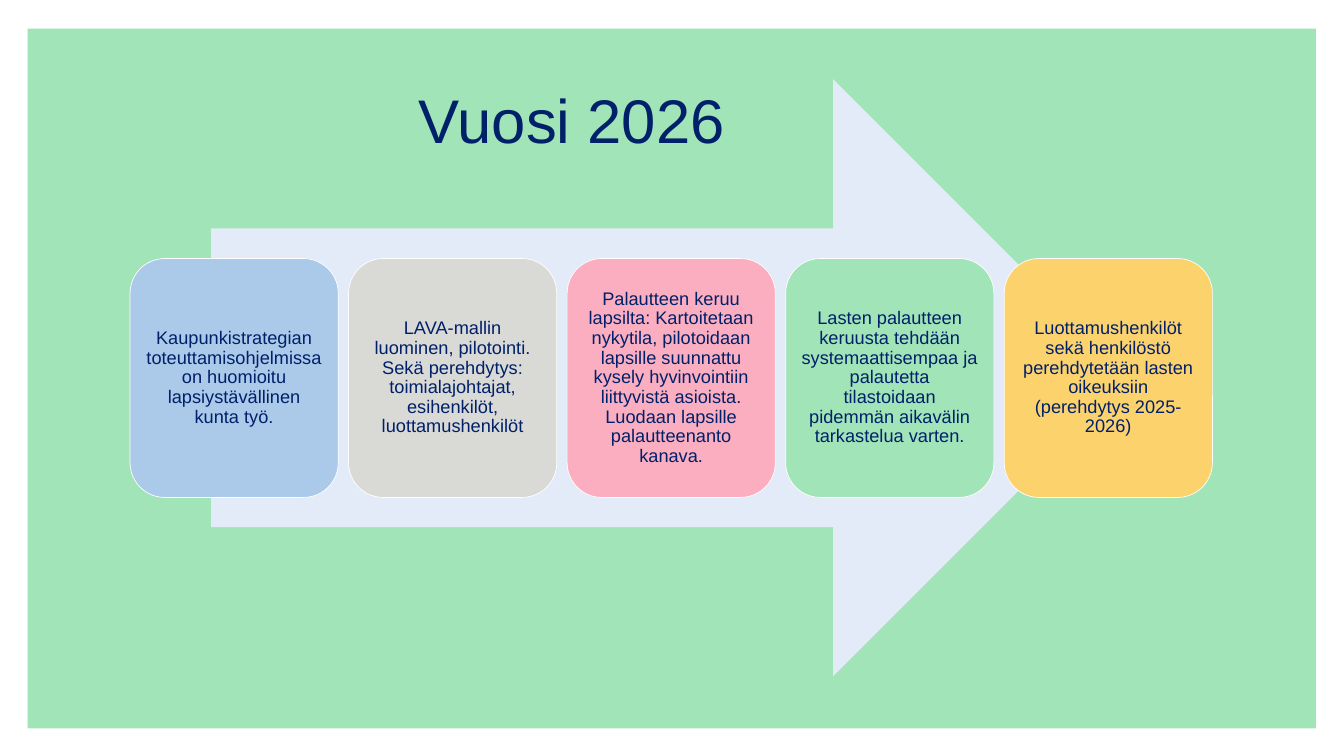
from typing import NamedTuple

from pptx import Presentation
from pptx import util as u
from pptx.dml.color import RGBColor
from pptx.enum import shapes, text

NAVY = "002069"
WHITE = "FFFFFF"
MINT = "A1E4B8"
PALE_BLUE = "E2EBF7"
STEP_LEFT, STEP_TOP, STEP_WIDTH, STEP_HEIGHT = 2.58, 5.13, 4.13, 4.74
STEP_PITCH = 4.335


class Step(NamedTuple):
    fill: str
    wording: str


STEPS = [
    Step("ABC9E9", "Kaupunkistrategian toteuttamisohjelmissa on huomioitu "
         "lapsiystävällinen kunta työ."),
    Step("D9D9D6", "LAVA-mallin luominen, pilotointi. Sekä perehdytys: "
         "toimialajohtajat, esihenkilöt, luottamushenkilöt"),
    Step("FBAEC0", "Palautteen keruu lapsilta: Kartoitetaan nykytila, pilotoidaan "
         "lapsille suunnattu kysely hyvinvointiin liittyvistä asioista. "
         "Luodaan lapsille palautteenanto kanava."),
    Step(MINT, "Lasten palautteen keruusta tehdään systemaattisempaa ja palautetta "
         "tilastoidaan pidemmän aikavälin tarkastelua varten."),
    Step("FCD26D", "Luottamushenkilöt sekä henkilöstö perehdytetään lasten oikeuksiin "
         "(perehdytys 2025-2026)"),
]


def set_all(target, values: dict) -> None:
    for name, value in values.items():
        setattr(target, name, value)


def paint(color_format, color: str) -> None:
    color_format.rgb = RGBColor.from_string(color)


def add_block(page, kind, left: float, top: float, width: float, height: float,
              fill: str):
    block = page.shapes.add_shape(
        kind, *map(u.Inches, (left, top, width, height)))
    block.shadow.inherit = False
    block.fill.solid()
    paint(block.fill.fore_color, fill)
    block.line.fill.background()
    return block


def write(frame, wording: str, size: float, para_format: dict) -> None:
    frame.word_wrap = True
    para = frame.paragraphs[0]
    set_all(para, para_format)
    span = para.add_run()
    span.text = wording
    set_all(span.font, {"name": "Arial", "size": u.Pt(size)})
    paint(span.font.color, NAVY)


def add_step(page, index: int, step: Step) -> None:
    box = add_block(page, shapes.MSO_SHAPE.ROUNDED_RECTANGLE,
                    STEP_LEFT + index * STEP_PITCH, STEP_TOP,
                    STEP_WIDTH, STEP_HEIGHT, step.fill)
    box.line.width = u.Pt(1)
    paint(box.line.color, WHITE)
    inset = u.Inches(0.11)
    set_all(box.text_frame, {
        "margin_left": inset, "margin_right": inset,
        "margin_top": inset, "margin_bottom": inset,
        "vertical_anchor": text.MSO_ANCHOR.MIDDLE,
    })
    write(box.text_frame, step.wording, 26,
          {"alignment": text.PP_ALIGN.CENTER, "line_spacing": 0.9})


def add_title(page, wording: str) -> None:
    title = page.shapes.add_textbox(*map(u.Inches, (8.21, 1.57, 10.25, 1.58)))
    title.text_frame.auto_size = text.MSO_AUTO_SIZE.SHAPE_TO_FIT_TEXT
    write(title.text_frame, wording, 88, {"alignment": text.PP_ALIGN.LEFT})


def main() -> None:
    deck = Presentation()
    set_all(deck, {"slide_width": u.Inches(26.66), "slide_height": u.Inches(15)})
    page = deck.slides.add_slide(deck.slide_layouts[6])
    page.background.fill.solid()
    paint(page.background.fill.fore_color, WHITE)
    add_block(page, shapes.MSO_SHAPE.RECTANGLE, 0.55, 0.57, 25.55, 13.88, MINT)
    add_block(page, shapes.MSO_SHAPE.RIGHT_ARROW, 4.19, 1.57, 18.26, 11.85, PALE_BLUE)
    for index, step in enumerate(STEPS):
        add_step(page, index, step)
    add_title(page, "Vuosi 2026")
    deck.save("out.pptx")


if __name__ == "__main__":
    main()
